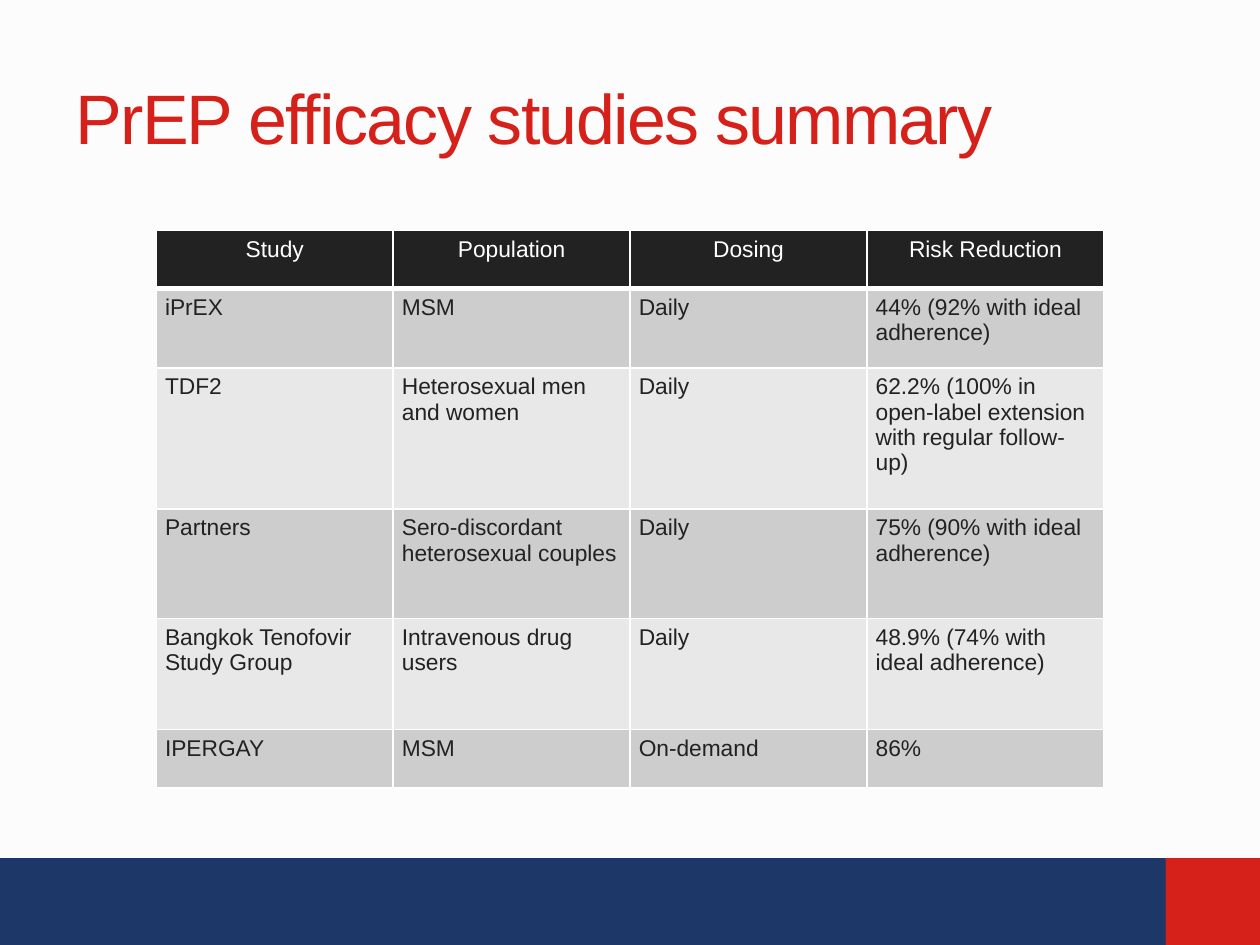
"""Build the PrEP efficacy studies summary slide."""
from dataclasses import dataclass

import pptx
import pptx.dml.color
import pptx.enum.shapes
import pptx.enum.text
import pptx.util
from lxml import etree
from pptx.util import Inches


@dataclass(frozen=True)
class Theme:
    background: str = "FCFCFC"
    navy: str = "1C3768"
    red: str = "D6201A"
    dark: str = "222222"
    white: str = "FFFFFF"
    bands: tuple = ("CDCDCD", "E8E8E8")
    font: str = "Arial"
    title_size: int = 40
    table_size: int = 13


theme = Theme()
NAMESPACE = "{http://schemas.openxmlformats.org/drawingml/2006/main}"


def paint(fill, color):
    fill.solid()
    fill.fore_color.rgb = pptx.dml.color.RGBColor.from_string(color)


def style_font(font, size, color):
    font.name = theme.font
    font.size = pptx.util.Pt(size)
    font.bold = False
    font.color.rgb = pptx.dml.color.RGBColor.from_string(color)


deck = pptx.Presentation()
deck.slide_width = Inches(10)
deck.slide_height = Inches(7.5)
slide = deck.slides.add_slide(deck.slide_layouts[5])
paint(slide.background.fill, theme.background)

for left, width, color in ((0, 10, theme.navy), (9.25, 0.75, theme.red)):
    bar = slide.shapes.add_shape(
        pptx.enum.shapes.MSO_SHAPE.RECTANGLE,
        Inches(left), Inches(6.81), Inches(width), Inches(0.69),
    )
    bar.shadow.inherit = False
    paint(bar.fill, color)
    bar.line.fill.background()

title = slide.shapes.title
title.left, title.top = Inches(0.5), Inches(0.3)
title.width, title.height = Inches(8.75), Inches(1.25)
title.text_frame.text = "PrEP efficacy studies summary"
title.text_frame.vertical_anchor = pptx.enum.text.MSO_ANCHOR.MIDDLE
para = title.text_frame.paragraphs[0]
para.alignment = pptx.enum.text.PP_ALIGN.LEFT
span = para.runs[0]
style_font(span.font, theme.title_size, theme.red)
span.font._element.set("spc", "-100")

studies = [
    ("Study", "Population", "Dosing", "Risk Reduction"),
    ("iPrEX", "MSM", "Daily", "44% (92% with ideal adherence)"),
    ("TDF2", "Heterosexual men and women", "Daily",
     "62.2% (100% in open-label extension with regular follow-up)"),
    ("Partners", "Sero-discordant heterosexual couples", "Daily",
     "75% (90% with ideal adherence)"),
    ("Bangkok Tenofovir Study Group", "Intravenous drug users", "Daily",
     "48.9% (74% with ideal adherence)"),
    ("IPERGAY", "MSM", "On-demand", "86%"),
]
row_heights = (0.46, 0.63, 1.12, 0.87, 0.88, 0.46)
table = slide.shapes.add_table(
    len(studies), len(studies[0]),
    Inches(1.24), Inches(1.83), Inches(7.52), Inches(sum(row_heights)),
).table
for column in table.columns:
    column.width = Inches(1.88)

for row_index, (height, study) in enumerate(zip(row_heights, studies)):
    table.rows[row_index].height = Inches(height)
    is_header = row_index == 0
    for column_index, text in enumerate(study):
        cell = table.cell(row_index, column_index)
        cell.margin_left = cell.margin_right = Inches(0.07)
        cell.margin_top = cell.margin_bottom = Inches(0.05)
        cell.text_frame.text = text
        para = cell.text_frame.paragraphs[0]
        if is_header:
            para.alignment = pptx.enum.text.PP_ALIGN.CENTER
        style_font(para.runs[0].font, theme.table_size,
                   theme.white if is_header else theme.dark)
        properties = cell._tc.get_or_add_tcPr()
        for side in ("lnL", "lnR", "lnT", "lnB"):
            points = 3 if is_header and side == "lnB" else 1
            border = etree.SubElement(properties, NAMESPACE + side, w=str(pptx.util.Pt(points)))
            solid = etree.SubElement(border, NAMESPACE + "solidFill")
            etree.SubElement(solid, NAMESPACE + "srgbClr", val=theme.white)
        paint(cell.fill, theme.dark if is_header else theme.bands[(row_index - 1) % 2])

deck.save("out.pptx")
